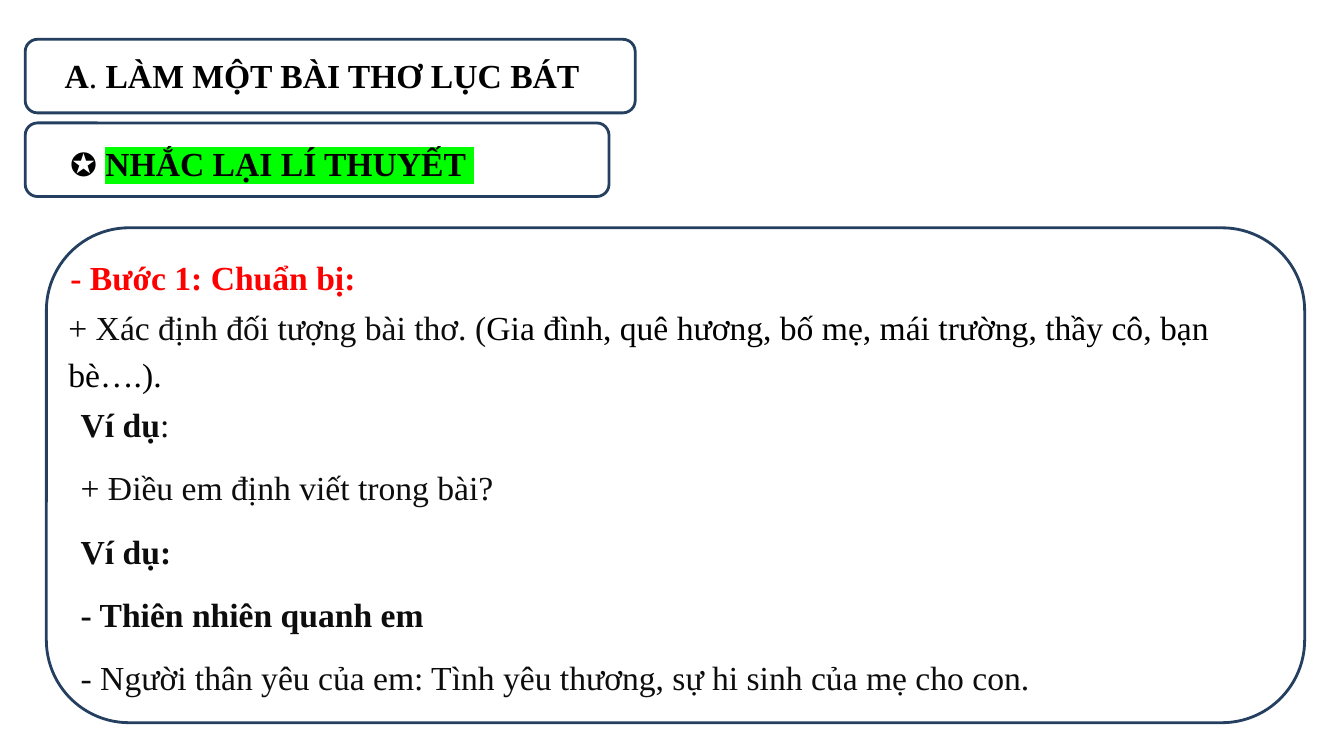
"""Build the slide on preparing to write a luc bat poem."""
from lxml import etree
from pptx import Presentation
from pptx.dml.color import RGBColor
from pptx.enum import shapes, text
from pptx.oxml import ns
from pptx.util import Inches, Pt

COLORS = {"black": "000000", "ink": "0D0D0D", "red": "FF0000",
          "navy": "243F60", "green": "00FF00"}


def place(box, at):
    box.left, box.top, box.width, box.height = [Inches(length) for length in at]


def write(box, at, lines, line_spacing=1.15, space_after=12):
    place(box, at)
    frame = box.text_frame
    frame.word_wrap = True
    frame.auto_size = text.MSO_AUTO_SIZE.SHAPE_TO_FIT_TEXT
    frame.vertical_anchor = text.MSO_ANCHOR.TOP
    frame.text = "\n".join("".join(part[0] for part in line) for line in lines)
    for para, line in zip(frame.paragraphs, lines):
        para.text = ""
        para.alignment = text.PP_ALIGN.LEFT
        para.line_spacing = line_spacing
        para.space_before = Pt(0)
        para.space_after = Pt(space_after)
        for words, color, bold in line:
            span = para.add_run()
            span.text = words
            span.font.name = "Times New Roman"
            span.font.size = Pt(24)
            span.font.bold = bold
            span.font.color.rgb = RGBColor.from_string(COLORS[color])


deck = Presentation()
deck.slide_width, deck.slide_height = Inches(13.33), Inches(7.5)
page = deck.slides.add_slide(deck.slide_layouts[1])

frames = [(0.25, 0.39, 6.05, 0.73), (0.25, 1.22, 5.79, 0.73), (0.46, 2.26, 12.48, 4.91)]
for at in frames:
    outline = page.shapes.add_shape(shapes.MSO_SHAPE.ROUNDED_RECTANGLE,
                                    *[Inches(length) for length in at])
    outline.adjustments[0] = 0.167
    outline.shadow.inherit = False
    outline.fill.background()
    outline.line.color.rgb = RGBColor.from_string(COLORS["navy"])
    outline.line.width = Pt(2)

write(page.shapes.title, (0.54, 0.49, 6.61, 0.5),
      [[("A", "black", True), (". ", "black", False),
        ("LÀM MỘT BÀI THƠ LỤC BÁT", "black", True)]],
      line_spacing=1.0, space_after=0)

review = page.shapes.add_textbox(0, 0, 0, 0)
write(review, (0.6, 1.31, 6.69, 0.54),
      [[("✪ ", "black", False), ("NHẮC LẠI LÍ THUYẾT ", "black", True)]], space_after=10)
marked = review.text_frame.paragraphs[0].runs[1]
highlight = etree.Element(ns.qn("a:highlight"))
etree.SubElement(highlight, ns.qn("a:srgbClr"), val=COLORS["green"])
marked.font._element.find(ns.qn("a:solidFill")).addnext(highlight)

step = page.shapes.add_textbox(0, 0, 0, 0)
write(step, (0.6, 2.44, 6.69, 0.54), [[("- Bước 1: Chuẩn bị:", "red", True)]])

topic = page.shapes.add_textbox(0, 0, 0, 0)
write(topic, (0.58, 2.94, 12.18, 1),
      [[("+ Xác định đối tượng bài thơ. (", "ink", False),
        ("Gia đình, quê hương, bố mẹ, mái trường, thầy cô, bạn bè….).", "black", False)]])

examples = page.placeholders[1]
write(examples, (0.7, 3.9, 12.18, 3.06), [
    [("Ví dụ", "ink", True), (":", "ink", False)],
    [("+ Điều em định viết trong bài?", "ink", False)],
    [("Ví dụ:", "ink", True)],
    [("- Thiên nhiên quanh em", "ink", True)],
    [("- Người thân yêu của em: Tình yêu thương, sự hi sinh của mẹ cho con.", "ink", False)],
])
for para in examples.text_frame.paragraphs:
    props = para._p.get_or_add_pPr()
    props.set("marL", "0")
    props.set("indent", "0")
    etree.SubElement(props, ns.qn("a:buNone"))

deck.save("out.pptx")
